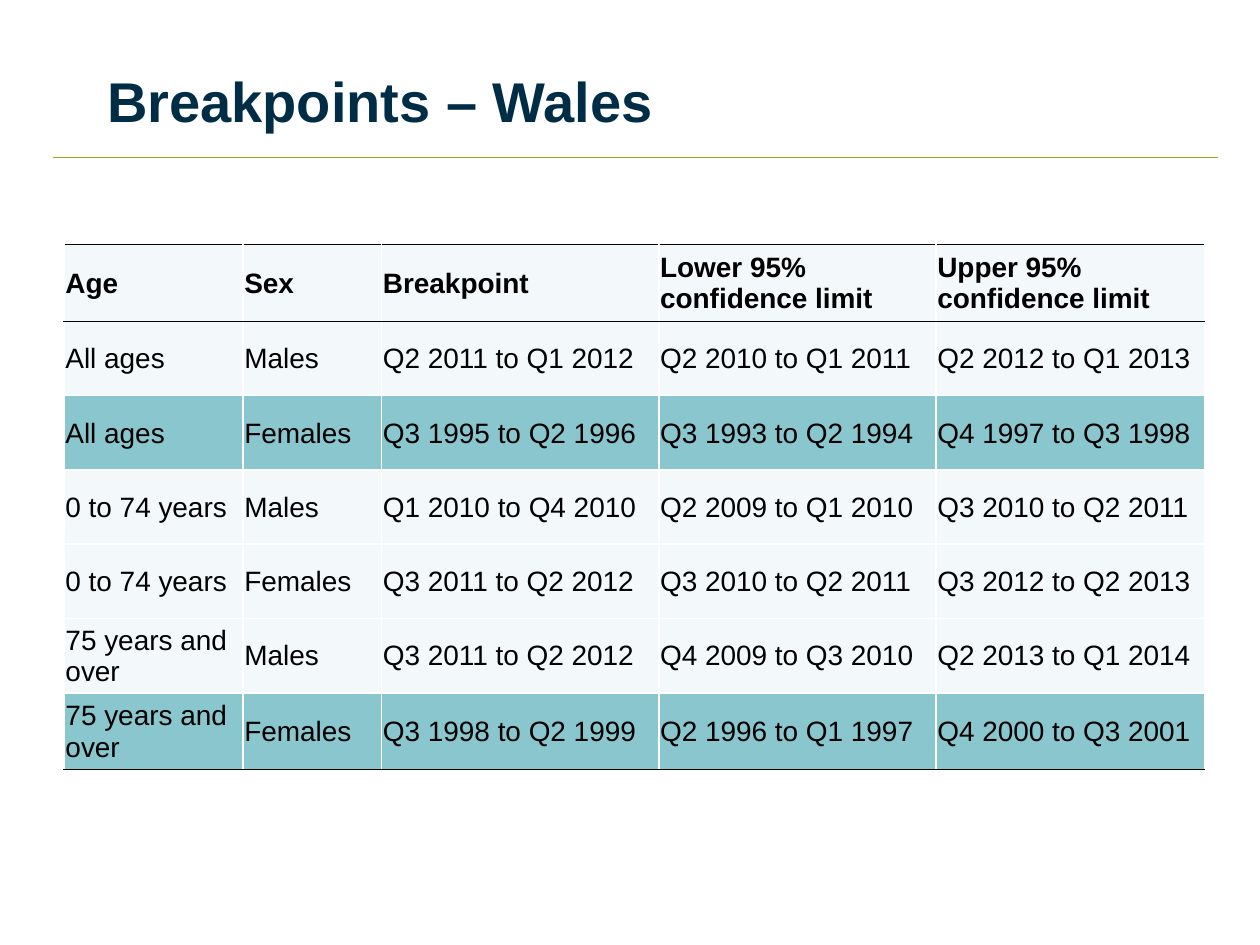
import dataclasses

import lxml.etree
import pptx
import pptx.dml.color
import pptx.enum.shapes
import pptx.enum.text
import pptx.oxml.ns
import pptx.util

Inches = pptx.util.Inches
Pt = pptx.util.Pt


@dataclasses.dataclass(frozen=True)
class Theme:
    font: str = "Arial"
    title_size: int = 32
    table_size: int = 16
    title_color: str = "002D46"
    rule_color: str = "9BA921"
    text_color: str = "000000"
    grid_color: str = "FFFFFF"
    row_color: str = "F3F9FA"
    highlight_color: str = "8AC6CD"


HEADERS = ["Age", "Sex", "Breakpoint", "Lower 95% confidence limit", "Upper 95% confidence limit"]
BREAKPOINTS = [
    ["All ages", "Males", "Q2 2011 to Q1 2012", "Q2 2010 to Q1 2011", "Q2 2012 to Q1 2013"],
    ["All ages", "Females", "Q3 1995 to Q2 1996", "Q3 1993 to Q2 1994", "Q4 1997 to Q3 1998"],
    ["0 to 74 years", "Males", "Q1 2010 to Q4 2010", "Q2 2009 to Q1 2010", "Q3 2010 to Q2 2011"],
    ["0 to 74 years", "Females", "Q3 2011 to Q2 2012", "Q3 2010 to Q2 2011", "Q3 2012 to Q2 2013"],
    ["75 years and over", "Males", "Q3 2011 to Q2 2012", "Q4 2009 to Q3 2010", "Q2 2013 to Q1 2014"],
    ["75 years and over", "Females", "Q3 1998 to Q2 1999", "Q2 1996 to Q1 1997", "Q4 2000 to Q3 2001"],
]
HIGHLIGHTED_ROWS = {2, 6}
COLUMN_WIDTHS = [1.42, 1.1, 2.2, 2.2, 2.13]
ROW_HEIGHTS = [0.61] + [0.59] * 5 + [0.61]


def rgb(color):
    return pptx.dml.color.RGBColor.from_string(color)


class SlideBuilder:
    def __init__(self, slide, theme):
        self.slide = slide
        self.theme = theme

    def format_text(self, text_frame, size, color, bold):
        for paragraph in text_frame.paragraphs:
            paragraph.alignment = pptx.enum.text.PP_ALIGN.LEFT
            for run in paragraph.runs:
                run.font.name = self.theme.font
                run.font.size = Pt(size)
                run.font.bold = bold
                run.font.color.rgb = rgb(color)

    def add_title(self, text, left, top, width, height):
        title = self.slide.shapes.title
        title.left, title.top = Inches(left), Inches(top)
        title.width, title.height = Inches(width), Inches(height)
        title.text_frame.text = text
        title.text_frame.vertical_anchor = pptx.enum.text.MSO_ANCHOR.MIDDLE
        self.format_text(title.text_frame, self.theme.title_size, self.theme.title_color, True)

    def add_rule(self, left, right, top):
        rule = self.slide.shapes.add_connector(
            pptx.enum.shapes.MSO_CONNECTOR.STRAIGHT,
            Inches(left), Inches(top), Inches(right), Inches(top))
        rule.line.color.rgb = rgb(self.theme.rule_color)
        rule.line.width = Pt(0.75)
        lxml.etree.SubElement(rule.element.spPr, pptx.oxml.ns.qn("a:effectLst"))

    def set_border(self, cell, side, color):
        """Draw one cell side, L, R, T or B; call in that order, before the fill."""
        qn = pptx.oxml.ns.qn
        properties = cell._tc.get_or_add_tcPr()
        line = lxml.etree.SubElement(properties, qn(f"a:ln{side}"), w=str(Pt(1)))
        fill = lxml.etree.SubElement(line, qn("a:solidFill"))
        lxml.etree.SubElement(fill, qn("a:srgbClr"), val=color)

    def format_cell(self, cell, fill_color, top_color, bottom_color, bold):
        grid_color = self.theme.grid_color
        for side, color in zip("LRTB", (grid_color, grid_color, top_color, bottom_color)):
            self.set_border(cell, side, color)
        cell.fill.solid()
        cell.fill.fore_color.rgb = rgb(fill_color)
        cell.vertical_anchor = pptx.enum.text.MSO_ANCHOR.MIDDLE
        cell.margin_left = cell.margin_top = cell.margin_right = Inches(0.01)
        cell.margin_bottom = 0
        self.format_text(cell.text_frame, self.theme.table_size, self.theme.text_color, bold)

    def add_table(self, rows, left, top, column_widths, row_heights, highlighted):
        theme = self.theme
        table = self.slide.shapes.add_table(
            len(rows), len(column_widths), Inches(left), Inches(top),
            Inches(sum(column_widths)), Inches(sum(row_heights))).table
        for column, width in zip(table.columns, column_widths):
            column.width = Inches(width)
        for row, height in zip(table.rows, row_heights):
            row.height = Inches(height)
        dark_edges = {0, 1, len(rows)}
        edges = [theme.text_color if index in dark_edges else theme.grid_color
                 for index in range(len(rows) + 1)]
        for row_index, values in enumerate(rows):
            fill_color = theme.highlight_color if row_index in highlighted else theme.row_color
            for column_index, value in enumerate(values):
                cell = table.cell(row_index, column_index)
                cell.text_frame.text = value
                self.format_cell(cell, fill_color, edges[row_index], edges[row_index + 1],
                                 bold=row_index == 0)


def main():
    presentation = pptx.Presentation()
    presentation.slide_width = Inches(10)
    presentation.slide_height = Inches(7.5)
    title_only = presentation.slide_layouts[5]
    builder = SlideBuilder(presentation.slides.add_slide(title_only), Theme())
    builder.add_rule(0.42, 9.67, 1.25)
    builder.add_title("Breakpoints – Wales", 0.75, 0.17, 8.5, 1.25)
    builder.add_table([HEADERS] + BREAKPOINTS, 0.51, 1.94,
                      COLUMN_WIDTHS, ROW_HEIGHTS, HIGHLIGHTED_ROWS)
    presentation.save("out.pptx")


if __name__ == "__main__":
    main()
